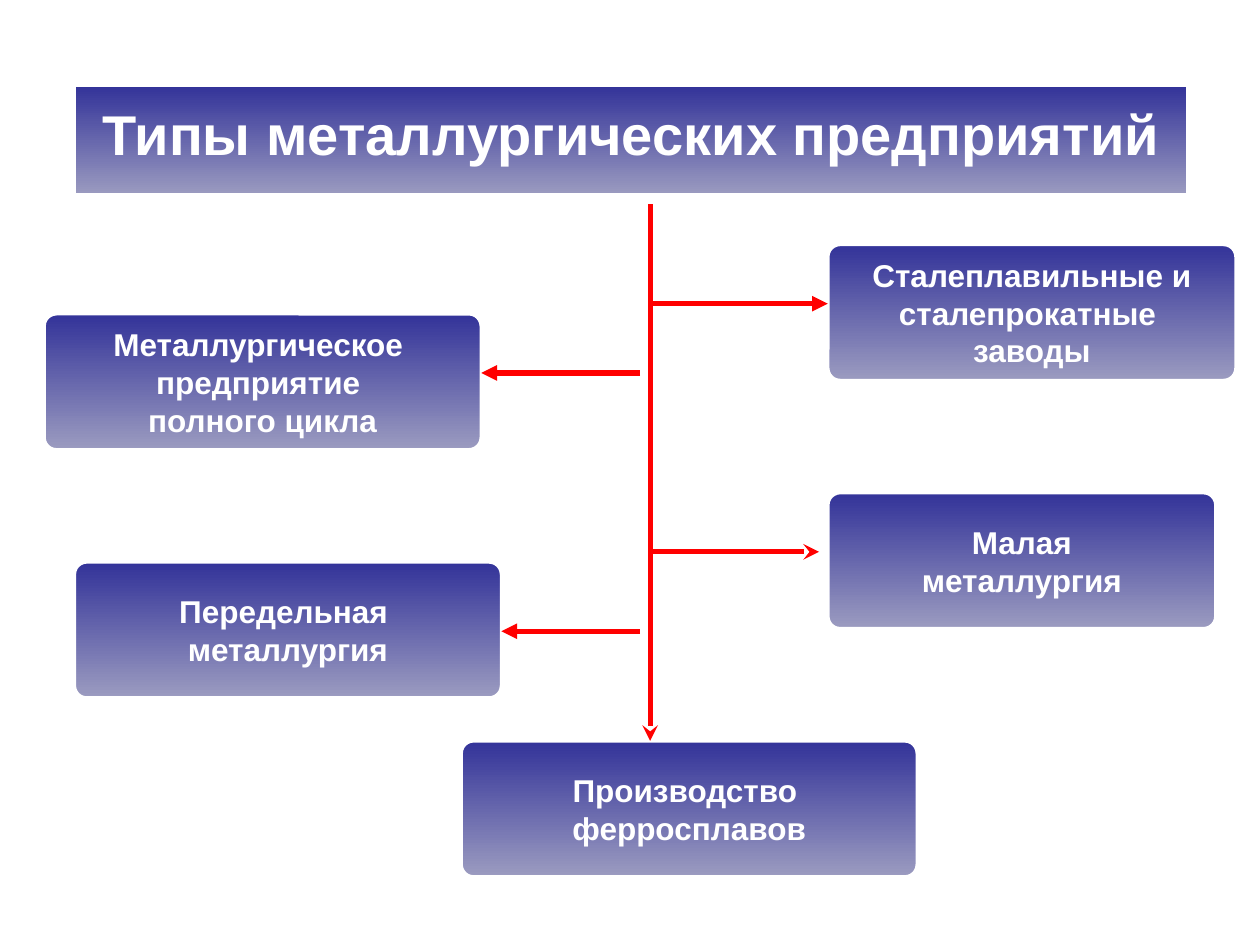
from lxml.etree import SubElement
from pptx import Presentation
from pptx.dml.color import RGBColor
from pptx.enum.shapes import MSO_CONNECTOR, MSO_SHAPE
from pptx.enum.text import MSO_ANCHOR, MSO_AUTO_SIZE, PP_ALIGN
from pptx.oxml.ns import qn
from pptx.util import Inches, Pt

COLORS = {"top": "333399", "base": "9B9BC0", "text": "FFFFFF", "edge": "FFFFFF", "arrow": "FF0000"}


def rgb(name):
    return RGBColor.from_string(COLORS[name])


def write(shape, text, size=18, anchor=MSO_ANCHOR.MIDDLE, wrap=False):
    shape.fill.gradient()
    shape.fill.gradient_angle = 270
    for stop, name in zip(shape.fill.gradient_stops, ("top", "base")):
        stop.color.rgb = rgb(name)
    shape.line.color.rgb = rgb("edge")
    shape.line.width = Pt(2)
    frame = shape.text_frame
    frame.text = text
    frame.word_wrap = wrap
    frame.auto_size = MSO_AUTO_SIZE.NONE
    frame.vertical_anchor = anchor
    for para in frame.paragraphs:
        para.alignment = PP_ALIGN.CENTER
        for run in para.runs:
            run.font.name = "Arial"
            run.font.size = Pt(size)
            run.font.bold = True
            run.font.color.rgb = rgb("text")


prs = Presentation()
prs.slide_width = Inches(10)
prs.slide_height = Inches(7.5)
slide = prs.slides.add_slide(prs.slide_layouts[5])

title = slide.shapes.title
title.left, title.top = Inches(0.59), Inches(0.68)
title.width, title.height = Inches(8.84), Inches(0.87)
geom = SubElement(title.element.spPr, qn("a:prstGeom"), prst="roundRect")
guides = SubElement(geom, qn("a:avLst"))
SubElement(guides, qn("a:gd"), name="adj", fmla="val 9100")
write(title, "Типы металлургических предприятий", size=32, anchor=MSO_ANCHOR.TOP, wrap=True)
title.text_frame.margin_top = Inches(0.11)

boxes = [
    (0.35, 2.49, 3.47, "Металлургическое \nпредприятие \nполного цикла"),
    (0.59, 4.46, 3.39, "Передельная \nметаллургия"),
    (6.57, 1.94, 3.24, "Сталеплавильные и\nсталепрокатные \nзаводы"),
    (6.57, 3.91, 3.08, "Малая\nметаллургия"),
    (3.66, 5.88, 3.62, "Производство \nферросплавов"),
]
for left, top, width, text in boxes:
    box = slide.shapes.add_shape(
        MSO_SHAPE.ROUNDED_RECTANGLE, Inches(left), Inches(top), Inches(width), Inches(1.08))
    box.adjustments[0] = 0.091
    box.shadow.inherit = False
    write(box, text)

arrows = [
    (5.16, 1.62, 5.16, 5.88, "stealth"),
    (5.08, 2.96, 3.82, 2.96, "triangle"),
    (5.16, 2.41, 6.57, 2.41, "triangle"),
    (5.08, 5.01, 3.98, 5.01, "triangle"),
    (5.16, 4.38, 6.5, 4.38, "stealth"),
]
for *ends, head in arrows:
    arrow = slide.shapes.add_connector(MSO_CONNECTOR.STRAIGHT, *map(Inches, ends))
    arrow.line.color.rgb = rgb("arrow")
    arrow.line.width = Pt(3)
    SubElement(arrow.line._get_or_add_ln(), qn("a:tailEnd"), type=head)
    SubElement(arrow.element.spPr, qn("a:effectLst"))

prs.save("out.pptx")
